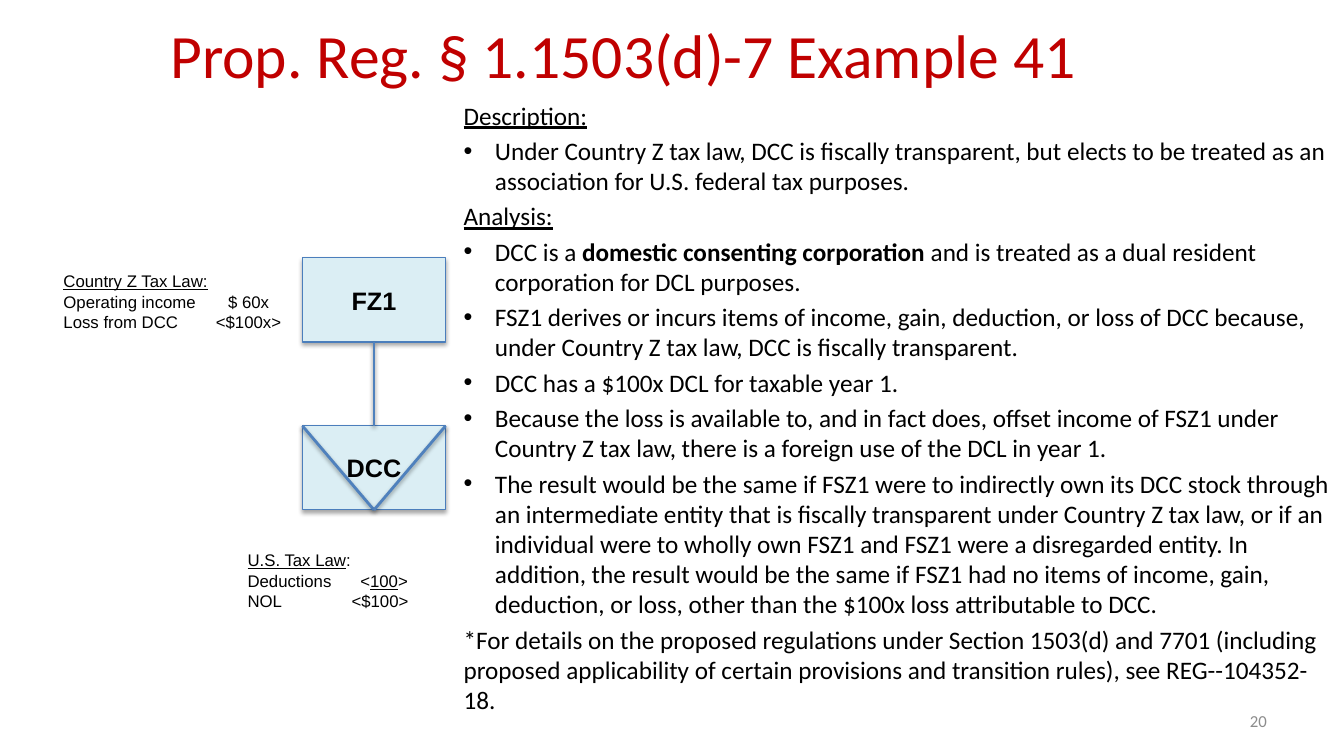
from lxml.etree import SubElement
from pptx import Presentation
from pptx.dml.color import RGBColor
from pptx.enum.shapes import MSO_CONNECTOR as Connector, MSO_SHAPE as Shape
from pptx.enum.text import MSO_ANCHOR as Anchor, MSO_AUTO_SIZE as AutoSize, PP_ALIGN as Align
from pptx.oxml.ns import qn
from pptx.util import Cm, Pt

RED = RGBColor(0xC0, 0x00, 0x00)
BLACK = RGBColor(0x00, 0x00, 0x00)
GRAY = RGBColor(0x8C, 0x8C, 0x8C)
PALE_BLUE = RGBColor(0xDB, 0xEE, 0xF4)
BORDER_BLUE = RGBColor(0x4B, 0x7E, 0xBC)
LINE_BLUE = RGBColor(0x4F, 0x81, 0xBD)


def set_font(para, name, size, color, bold=None):
    font = para.font
    font.name, font.size, font.bold = name, Pt(size), bold
    font.color.rgb = color


def add_spans(para, spans, style):
    """Add text pieces, giving every second one the style (bold or underline)."""
    for index, text in enumerate(spans):
        if text:
            span = para.add_run()
            span.text = text
            if index % 2:
                setattr(span.font, style, True)


deck = Presentation()
deck.slide_width, deck.slide_height = Cm(33.87), Cm(19.05)
slide = deck.slides.add_slide(deck.slide_layouts[1])

# Title
title = slide.shapes.title
title.left, title.top, title.width, title.height = Cm(2.29), Cm(-0.76), Cm(26.85), Cm(4.22)
title.text_frame.text = "Prop. Reg. § 1.1503(d)-7 Example 41"
title.text_frame.auto_size = AutoSize.NONE
set_font(title.text_frame.paragraphs[0], "Calibri", 44, RED)

# Description and analysis
HEADING, BULLET, NOTE = "heading", "bullet", "note"
body_lines = [
    (HEADING, ["", "Description:"]),
    (BULLET, ["Under Country Z tax law, DCC is fiscally transparent, but elects to be "
              "treated as an association for U.S. federal tax purposes."]),
    (HEADING, ["", "Analysis:"]),
    (BULLET, ["DCC is a ", "domestic consenting corporation ",
              "and is treated as a dual resident corporation for DCL purposes."]),
    (BULLET, ["FSZ1 derives or incurs items of income, gain, deduction, or loss of DCC "
              "because, under Country Z tax law, DCC is fiscally transparent."]),
    (BULLET, ["DCC has a $100x DCL for taxable year 1."]),
    (BULLET, ["Because the loss is available to, and in fact does, offset income of FSZ1 "
              "under Country Z tax law, there is a foreign use of the DCL in year 1."]),
    (BULLET, ["The result would be the same if FSZ1 were to indirectly own its DCC stock "
              "through an intermediate entity that is fiscally transparent under Country Z "
              "tax law, or if an individual were to wholly own FSZ1 and FSZ1 were a "
              "disregarded entity. In addition, the result would be the same if FSZ1 had no "
              "items of income, gain, deduction, or loss, other than the $100x loss "
              "attributable to DCC."]),
    (NOTE, ["*For details on the proposed regulations under Section 1503(d) and 7701 "
            "(including proposed applicability of certain provisions and transition rules), "
            "see REG--104352-18."]),
]
body = slide.placeholders[1]
body.left, body.top, body.width, body.height = Cm(11.43), Cm(2.39), Cm(22.43), Cm(15.8)
frame = body.text_frame
frame.auto_size = AutoSize.NONE
for index, (role, spans) in enumerate(body_lines):
    para = frame.add_paragraph() if index else frame.paragraphs[0]
    properties = para._p.get_or_add_pPr()
    indent = Cm(0.79) if role == BULLET else 0
    properties.set("marL", str(indent))
    properties.set("indent", str(-indent))
    if role != BULLET:
        SubElement(properties, qn("a:buNone"))
    set_font(para, "Calibri", 18, BLACK)
    add_spans(para, spans, "underline" if role == HEADING else "bold")

# Ownership chart
entities = {}
for name, top in [("FZ1", 6.5), ("DCC", 10.73)]:
    box = slide.shapes.add_shape(Shape.RECTANGLE, Cm(7.62), Cm(top), Cm(3.61), Cm(2.12))
    box.fill.solid()
    box.fill.fore_color.rgb = PALE_BLUE
    box.line.color.rgb = BORDER_BLUE
    box.line.width = Pt(0.75)
    box.text_frame.text = name
    box.text_frame.vertical_anchor = Anchor.MIDDLE
    para = box.text_frame.paragraphs[0]
    para.alignment = Align.CENTER
    set_font(para, "Arial", 18, BLACK, bold=True)
    entities[name] = box

parent, subsidiary = entities["FZ1"], entities["DCC"]
right = subsidiary.left + subsidiary.width
for start_x, end_site in [(None, 0), (subsidiary.left, 2), (right, 2)]:
    line = slide.shapes.add_connector(
        Connector.STRAIGHT, start_x or 0, subsidiary.top, right, subsidiary.top)
    if start_x is None:
        line.begin_connect(parent, 2)
    line.end_connect(subsidiary, end_site)
    line.line.color.rgb = LINE_BLUE
    line.line.width = Pt(2)

# Tax computations: each row has its tab stop in cm and its spans
computations = [
    (1.35, 6.71, 6.2, [
        (None, ["", "Country Z Tax Law:"]),
        (4.15, ["Operating income\t$ 60x"]),
        (3.84, ["Loss from DCC\t<$100x>"])]),
    (5.99, 13.74, 5.69, [
        (None, ["", "U.S. Tax Law", ":"]),
        (2.84, ["Deductions\t<", "100", ">"]),
        (2.62, ["NOL\t<$100>"])]),
]
for left, top, width, rows in computations:
    box = slide.shapes.add_textbox(Cm(left), Cm(top), Cm(width), Cm(1.8))
    frame = box.text_frame
    frame.word_wrap = True
    for index, (stop, spans) in enumerate(rows):
        para = frame.add_paragraph() if index else frame.paragraphs[0]
        if stop:
            tabs = SubElement(para._p.get_or_add_pPr(), qn("a:tabLst"))
            SubElement(tabs, qn("a:tab"), pos=str(Cm(stop)), algn="l")
        set_font(para, "Arial", 12, BLACK)
        add_spans(para, spans, "underline")

# Slide number
number = slide.shapes.add_textbox(Cm(24.28), Cm(17.65), Cm(7.9), Cm(1.02))
number.text_frame.word_wrap = True
number.text_frame.vertical_anchor = Anchor.MIDDLE
number.text_frame.text = "20"
para = number.text_frame.paragraphs[0]
para.alignment = Align.RIGHT
set_font(para, "Calibri", 12, GRAY)

deck.save("out.pptx")
